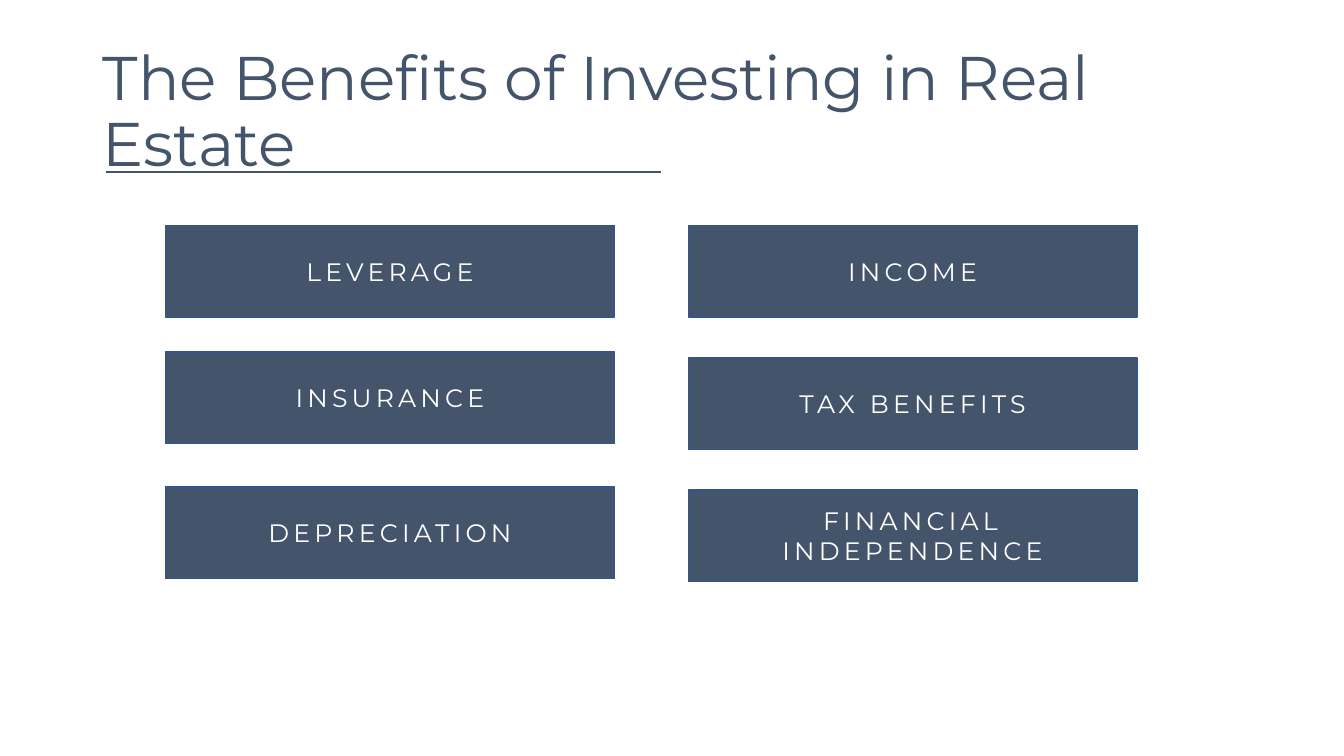
from dataclasses import dataclass

from lxml.etree import SubElement
from pptx import Presentation
from pptx.dml.color import RGBColor
from pptx.enum.shapes import MSO_CONNECTOR, MSO_SHAPE
from pptx.enum.text import MSO_ANCHOR, MSO_AUTO_SIZE, PP_ALIGN
from pptx.oxml.ns import qn
from pptx.slide import Slide
from pptx.text.text import TextFrame
from pptx.util import Emu, Pt

EMU_PER_PX = 4572


@dataclass(frozen=True)
class Theme:
    font: str = "Montserrat"
    slate: RGBColor = RGBColor(0x44, 0x54, 0x6A)
    border: RGBColor = RGBColor(0x32, 0x54, 0x91)
    white: RGBColor = RGBColor(0xFF, 0xFF, 0xFF)
    title_size: int = 44
    box_size: int = 18
    box_tracking: int = 3
    line_width: int = 1


@dataclass(frozen=True)
class BenefitBox:
    label: str
    left: int
    top: int
    width: int = 890
    height: int = 182


THEME = Theme()
LEFT_COLUMN = 329
RIGHT_COLUMN = 1366
BENEFITS = (
    BenefitBox("LEVERAGE", LEFT_COLUMN, 447),
    BenefitBox("INSURANCE", LEFT_COLUMN, 698),
    BenefitBox("DEPRECIATION", LEFT_COLUMN, 966),
    BenefitBox("INCOME", RIGHT_COLUMN, 447),
    BenefitBox("TAX BENEFITS", RIGHT_COLUMN, 710),
    BenefitBox("FINANCIAL INDEPENDENCE", RIGHT_COLUMN, 972),
)


def px(length: int) -> Emu:
    return Emu(length * EMU_PER_PX)


def write_text(
    text_frame: TextFrame,
    text: str,
    *,
    size: int,
    color: RGBColor,
    alignment: PP_ALIGN,
    line_spacing: float = 1.0,
    tracking: int = 0,
) -> None:
    text_frame.word_wrap = True
    text_frame.auto_size = MSO_AUTO_SIZE.NONE
    text_frame.vertical_anchor = MSO_ANCHOR.MIDDLE
    paragraph = text_frame.paragraphs[0]
    paragraph.alignment = alignment
    paragraph.line_spacing = line_spacing
    run = paragraph.add_run()
    run.text = text
    run.font.name = THEME.font
    run.font.size = Pt(size)
    run.font.color.rgb = color
    if tracking:
        run.font._element.set("spc", str(tracking * 100))


def add_title(slide: Slide, text: str) -> None:
    title = slide.shapes.title
    title.left, title.top = px(184), px(80)
    title.width, title.height = px(2300), px(290)
    write_text(
        title.text_frame,
        text,
        size=THEME.title_size,
        color=THEME.slate,
        alignment=PP_ALIGN.LEFT,
        line_spacing=0.9,
    )


def add_benefit(slide: Slide, box: BenefitBox) -> None:
    shape = slide.shapes.add_shape(
        MSO_SHAPE.RECTANGLE, px(box.left), px(box.top), px(box.width), px(box.height)
    )
    shape.shadow.inherit = False
    shape.fill.solid()
    shape.fill.fore_color.rgb = THEME.slate
    shape.line.color.rgb = THEME.border
    shape.line.width = Pt(THEME.line_width)
    write_text(
        shape.text_frame,
        box.label,
        size=THEME.box_size,
        color=THEME.white,
        alignment=PP_ALIGN.CENTER,
        tracking=THEME.box_tracking,
    )


def add_title_rule(slide: Slide, left: int, right: int, top: int) -> None:
    rule = slide.shapes.add_connector(
        MSO_CONNECTOR.STRAIGHT, px(left), px(top), px(right), px(top)
    )
    rule.line.color.rgb = THEME.slate
    rule.line.width = Pt(THEME.line_width)
    SubElement(rule._element.spPr, qn("a:effectLst"))


def main() -> None:
    presentation = Presentation()
    presentation.slide_width = px(2667)
    presentation.slide_height = px(1500)
    slide = presentation.slides.add_slide(presentation.slide_layouts[5])
    slide.background.fill.solid()
    slide.background.fill.fore_color.rgb = THEME.white
    add_title(slide, "The Benefits of Investing in Real Estate")
    for box in BENEFITS:
        add_benefit(slide, box)
    add_title_rule(slide, 210, 1312, 341)
    presentation.save("out.pptx")


if __name__ == "__main__":
    main()
